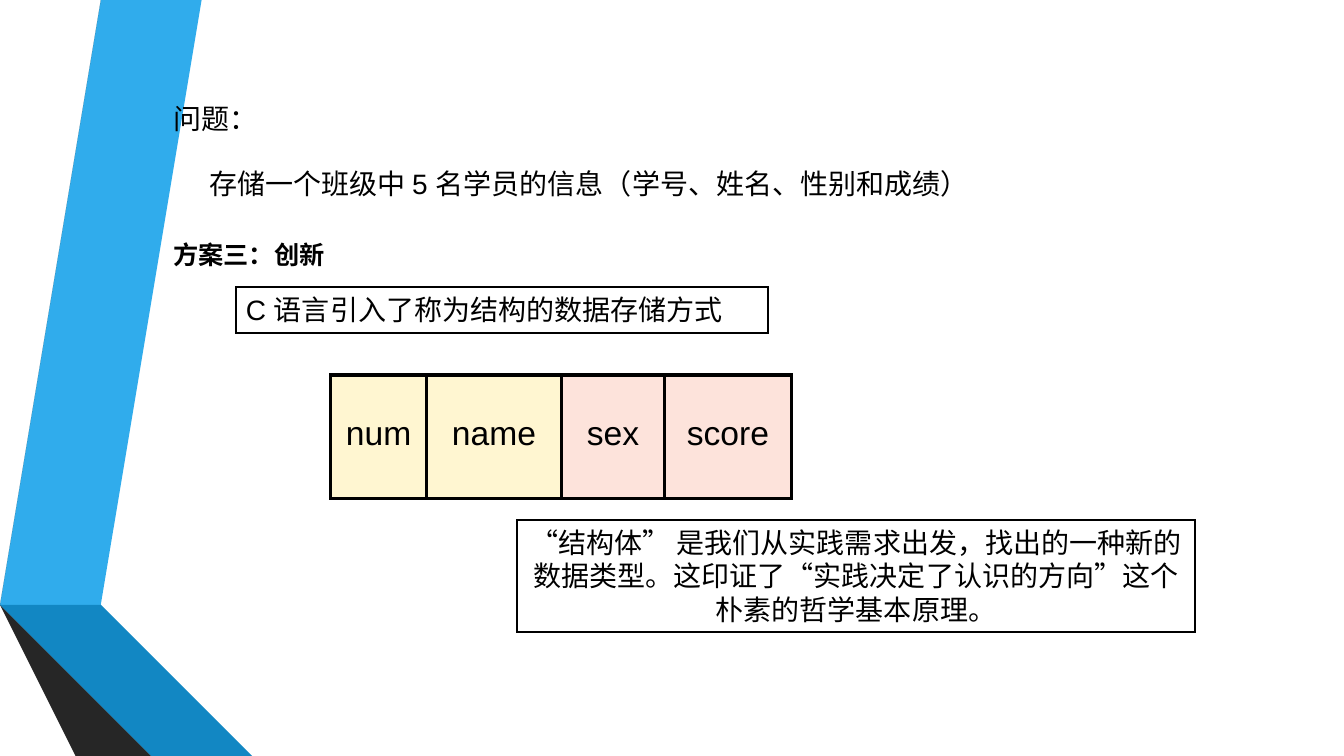
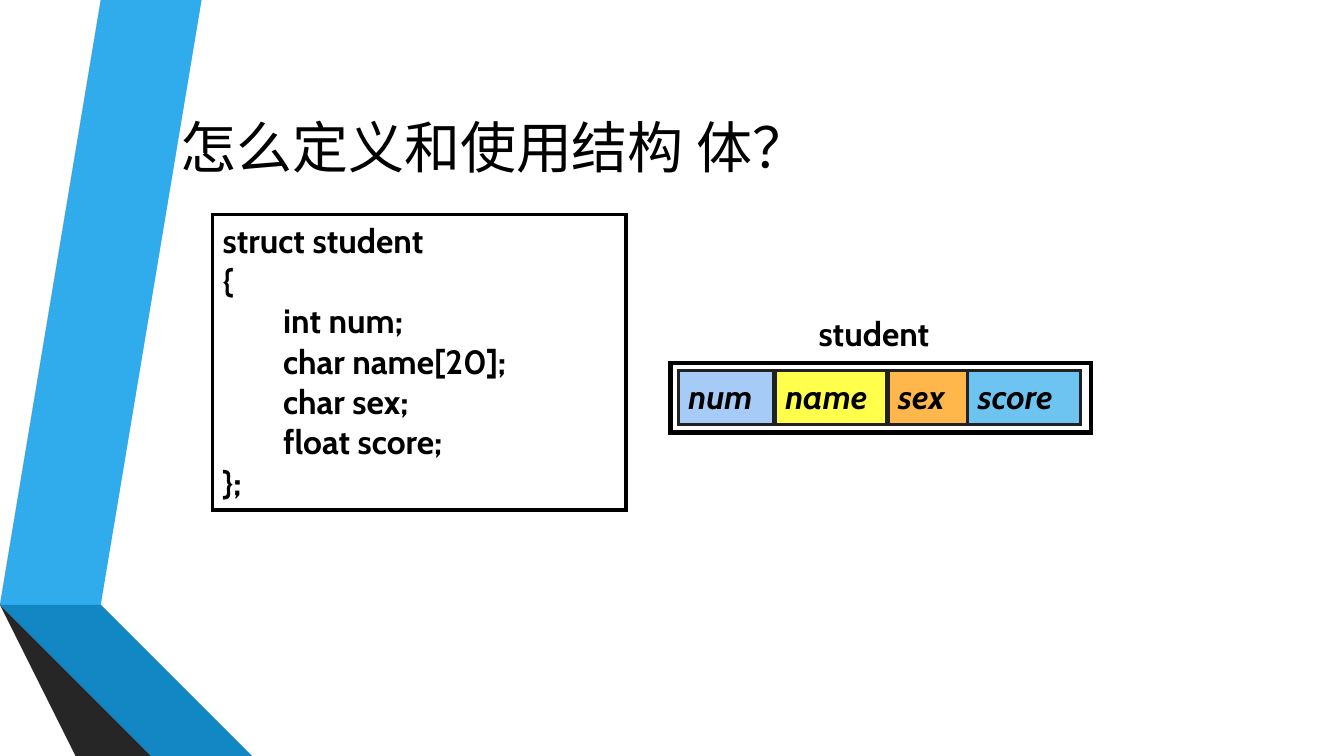
from dataclasses import dataclass
from typing import NamedTuple, Optional

from lxml import etree
from pptx import Presentation
from pptx.dml import color as dml
from pptx.enum import shapes, text
from pptx.oxml import ns
from pptx import util as u


@dataclass(frozen=True)
class Theme:
    # Colours
    ink: str = "000000"
    paper: str = "FFFFFF"
    cell_edge: str = "212121"
    blue: str = "30ACEC"
    blue_fold: str = "1287C3"
    blue_edge: str = "0C5A82"
    grey: str = "595959"
    grey_fold: str = "404040"
    grey_edge: str = "262626"
    cream: str = "FFF6D1"
    blush: str = "FDE3DB"
    pale_blue: str = "82B6F4"
    yellow: str = "FFFF00"
    orange: str = "FF9900"
    # Fonts and type sizes
    plain: str = "Arial"
    display: str = "Cabin"
    title: int = 40
    field: int = 24
    body: int = 20
    label: int = 18


THEME = Theme()
ALIGN = text.PP_ALIGN
MIDDLE = text.MSO_ANCHOR.MIDDLE


class Band(NamedTuple):
    fill: str
    points: list[tuple[float, float]]


class Field(NamedTuple):
    name: str
    width: float
    fill: str
    gap: float = 0  # space before the field


class Area(NamedTuple):
    left: float
    top: float
    width: float
    height: float


BANDS = [
    Band(THEME.blue, [(0.5, 5.78), (0.77, 5.83), (1.73, 0), (1.45, 0)]),
    Band(THEME.grey, [(1.39, 0), (1.11, 0), (0.16, 5.73), (0.44, 5.77)]),
    Band(THEME.grey_edge, [(0.16, 5.73), (1.45, 7.5), (1.51, 7.5)]),
    Band(THEME.blue_edge, [(0.5, 5.79), (2.08, 7.5), (2.14, 7.5)]),
    Band(THEME.blue_fold, [(0.5, 5.78), (2.14, 7.5), (2.83, 7.5), (0.77, 5.83)]),
    Band(THEME.grey_fold, [(2.02, 7.5), (0.48, 5.83), (0.44, 5.77),
                           (0.16, 5.73), (1.51, 7.5)]),
]

MEMORY_FIELDS = [
    Field("num", 0.95, THEME.cream),
    Field("name", 1.34, THEME.cream),
    Field("sex", 1.02, THEME.blush),
    Field("score", 1.26, THEME.blush),
]

STUDENT_FIELDS = [
    Field("num", 0.94, THEME.pale_blue),
    Field("name", 1.1, THEME.yellow, gap=0.02),
    Field("sex", 0.79, THEME.orange, gap=0.02),
    Field("score", 1.12, THEME.blue),
]

STRUCT_HEAD = ["struct student", "{"]
STRUCT_MEMBERS = ["int num;", "char name[20];", "char sex;", "float score;"]
STRUCT_TAIL = ["};"]


def rgb(value: str) -> dml.RGBColor:
    return dml.RGBColor.from_string(value)


def fill_solid(shape, value: str, opacity: int = 100) -> None:
    shape.fill.solid()
    shape.fill.fore_color.rgb = rgb(value)
    if opacity < 100:
        tint = shape.fill._xPr.find(".//" + ns.qn("a:srgbClr"))
        etree.SubElement(tint, ns.qn("a:alpha"), val=str(opacity * 1000))


def add_band(page, band: Band) -> None:
    builder = page.shapes.build_freeform(*band.points[0], scale=u.Inches(1))
    builder.add_line_segments(band.points[1:], close=True)
    shape = builder.convert_to_shape()
    shape.shadow.inherit = False
    fill_solid(shape, band.fill)
    shape.line.fill.background()


def add_page(deck):
    """Blank page with the folded ribbons on the left."""
    page = deck.slides.add_slide(deck.slide_layouts[6])
    for band in BANDS:
        add_band(page, band)
    return page


def add_frame(page, area: Area, *, fill: Optional[str] = None,
              opacity: int = 100, line: str = THEME.ink, weight: float = 1.5):
    """Outlined rectangle with square corners."""
    box = page.shapes.add_shape(shapes.MSO_SHAPE.RECTANGLE, *map(u.Inches, area))
    box.shadow.inherit = False
    if fill:
        fill_solid(box, fill, opacity)
    else:
        box.fill.background()
    box.line.color.rgb = rgb(line)
    box.line.width = u.Pt(weight)
    outline = box._element.spPr.find(ns.qn("a:ln"))
    etree.SubElement(outline, ns.qn("a:miter"), lim="800000")
    return box


def add_label(page, area: Area):
    return page.shapes.add_textbox(*map(u.Inches, area))


def write(box, *lines: str, size: int = THEME.body, font: str = THEME.plain,
          bold: bool = False, italic: bool = False, align=ALIGN.LEFT,
          anchor=text.MSO_ANCHOR.TOP, wrap: bool = True, grow: bool = False,
          spacing: Optional[float] = None, before: float = 0,
          bottom: float = 0.05, indented: tuple[str, ...] = ()) -> None:
    frame = box.text_frame
    frame.word_wrap = wrap
    frame.vertical_anchor = anchor
    frame.margin_bottom = u.Inches(bottom)
    fit = text.MSO_AUTO_SIZE
    frame.auto_size = fit.SHAPE_TO_FIT_TEXT if grow else fit.NONE
    for index, line in enumerate(lines):
        para = frame.add_paragraph() if index else frame.paragraphs[0]
        para.alignment = align
        para.space_before = u.Pt(before)
        if spacing:
            para.line_spacing = spacing
        if line in indented:
            para._p.get_or_add_pPr().set("marL", str(u.Inches(0.6)))
        span = para.add_run()
        span.text = line
        span.font.name = font
        span.font.size = u.Pt(size)
        span.font.bold = bold
        span.font.italic = italic
        span.font.color.rgb = rgb(THEME.ink)


def place_fields(fields: list[Field], left: float, top: float,
                 height: float) -> list[tuple[Field, Area]]:
    """Lay fields side by side from the left edge."""
    placed = []
    for field in fields:
        left += field.gap
        placed.append((field, Area(left, top, field.width, height)))
        left += field.width
    return placed


def build_problem_page(deck) -> None:
    page = add_page(deck)

    # Problem and its solution heading
    write(add_label(page, Area(1.62, 0.75, 10.96, 0.84)), "问题：",
          anchor=MIDDLE, before=4)
    write(add_label(page, Area(1.98, 1.67, 8.67, 0.67)),
          "存储一个班级中 5 名学员的信息（学号、姓名、性别和成绩）",
          spacing=0.8, before=4)
    write(add_label(page, Area(1.62, 2.33, 2.64, 0.4)), "方案三：创新",
          size=THEME.label, font=THEME.display, bold=True, grow=True)
    write(add_frame(page, Area(2.34, 2.85, 5.28, 0.45), fill=THEME.paper),
          "C 语言引入了称为结构的数据存储方式", align=ALIGN.JUSTIFY, grow=True)

    # Memory layout
    for field, area in place_fields(MEMORY_FIELDS, 3.28, 3.72, 1.23):
        write(add_frame(page, area, fill=field.fill, weight=2.25), field.name,
              size=THEME.field, align=ALIGN.CENTER, anchor=MIDDLE, bottom=0.15)

    # Conclusion
    write(add_frame(page, Area(5.13, 5.16, 6.72, 1.11), fill=THEME.paper),
          "“结构体” 是我们从实践需求出发，找出的一种新的数据类型。"
          "这印证了“实践决定了认识的方向”这个朴素的哲学基本原理。",
          align=ALIGN.CENTER, grow=True)


def build_struct_page(deck) -> None:
    page = add_page(deck)
    write(add_label(page, Area(1.69, 0.76, 10.96, 1.37)),
          "怎么定义和使用结构 体？", size=THEME.title, font=THEME.display,
          anchor=MIDDLE)

    # Struct definition
    code = add_frame(page, Area(2.11, 2.13, 4.1, 2.93), fill=THEME.paper,
                     opacity=80, weight=2.25)
    write(code, *STRUCT_HEAD, *STRUCT_MEMBERS, *STRUCT_TAIL,
          size=THEME.field, font=THEME.display, bold=True, grow=True,
          indented=tuple(STRUCT_MEMBERS))

    # Student record, with earlier fields in front
    add_frame(page, Area(6.65, 3.6, 4.17, 0.69), weight=3)
    for field, area in reversed(place_fields(STUDENT_FIELDS, 6.73, 3.68, 0.53)):
        box = add_frame(page, area, fill=field.fill, opacity=70,
                        line=THEME.cell_edge, weight=2.25)
        write(box, field.name, size=THEME.field, font=THEME.display,
              bold=True, italic=True, wrap=False, grow=True)
    write(add_label(page, Area(8.02, 3.06, 1.4, 0.5)), "student",
          size=THEME.field, font=THEME.display, bold=True, wrap=False, grow=True)


def main() -> None:
    deck = Presentation()
    deck.slide_width = u.Inches(13.33)
    deck.slide_height = u.Inches(7.5)
    build_problem_page(deck)
    build_struct_page(deck)
    deck.save("out.pptx")


if __name__ == "__main__":
    main()
